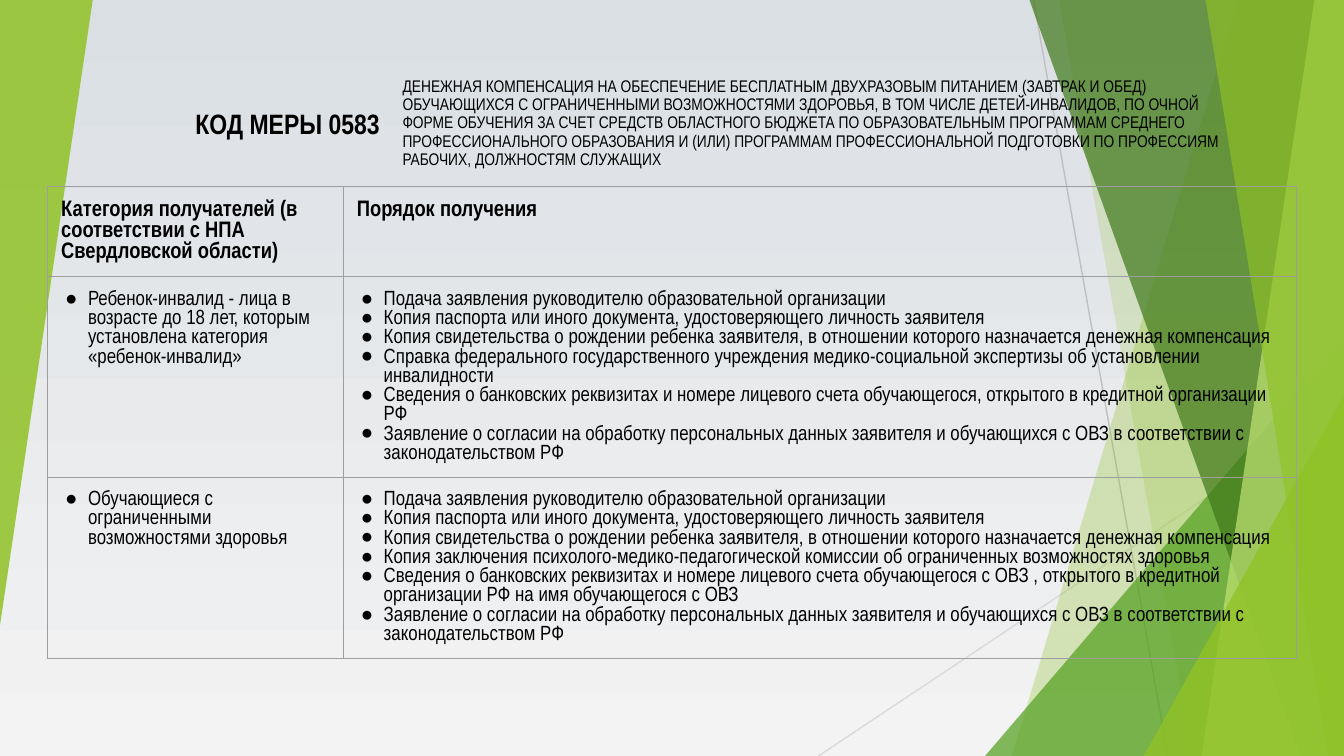
"""Builds a slide on a meal compensation measure: who receives it and how to apply."""
from dataclasses import dataclass

import lxml.etree
import pptx
import pptx.dml.color
import pptx.enum.dml
import pptx.enum.shapes
import pptx.enum.text
import pptx.oxml
import pptx.oxml.ns
import pptx.util

WIDTH = pptx.util.Inches(10)
HEIGHT = pptx.util.Inches(5.625)
FONT = "Arial Narrow"
BLACK = "000000"
BORDER = "9E9E9E"
COLUMNS = (22, 70.9)
ROWS = (11.9, 26.5, 23.95)

APPLICATION = "Подача заявления руководителю образовательной организации"
PASSPORT = "Копия паспорта или иного документа, удостоверяющего личность заявителя"
BIRTH = "Копия свидетельства о рождении ребенка заявителя, в отношении которого назначается денежная компенсация"
CONSENT = "Заявление о согласии на обработку персональных данных заявителя и обучающихся с ОВЗ в соответствии с законодательством РФ"
HEADERS = ("Категория получателей (в соответствии с НПА Свердловской области)", "Порядок получения")
TITLE = (
    "ДЕНЕЖНАЯ КОМПЕНСАЦИЯ НА ОБЕСПЕЧЕНИЕ БЕСПЛАТНЫМ ДВУХРАЗОВЫМ ПИТАНИЕМ (ЗАВТРАК И ОБЕД) "
    "ОБУЧАЮЩИХСЯ С ОГРАНИЧЕННЫМИ ВОЗМОЖНОСТЯМИ ЗДОРОВЬЯ, В ТОМ ЧИСЛЕ ДЕТЕЙ-ИНВАЛИДОВ, ПО ОЧНОЙ "
    "ФОРМЕ ОБУЧЕНИЯ ЗА СЧЕТ СРЕДСТВ ОБЛАСТНОГО БЮДЖЕТА ПО ОБРАЗОВАТЕЛЬНЫМ ПРОГРАММАМ СРЕДНЕГО "
    "ПРОФЕССИОНАЛЬНОГО ОБРАЗОВАНИЯ И (ИЛИ) ПРОГРАММАМ ПРОФЕССИОНАЛЬНОЙ ПОДГОТОВКИ ПО ПРОФЕССИЯМ "
    "РАБОЧИХ, ДОЛЖНОСТЯМ СЛУЖАЩИХ"
)


@dataclass(frozen=True)
class Area:
    """A rectangle in percent of the slide's width and height."""
    left: float
    top: float
    width: float
    height: float

    def lengths(self) -> tuple:
        """Return left, top, width and height as slide lengths."""
        return across(self.left), down(self.top), across(self.width), down(self.height)


@dataclass(frozen=True)
class Ray:
    """A thin line between two points in percent."""
    start: tuple
    end: tuple
    color: str


@dataclass(frozen=True)
class Facet:
    """A full-height panel from a slanted left edge to the slide's right edge."""
    top_left: float
    bottom_left: float
    color: str
    opacity: int


@dataclass(frozen=True)
class Corner:
    """A right-angled triangle in an area."""
    area: Area
    color: str
    opacity: int
    rotation: int = 0


@dataclass(frozen=True)
class Recipient:
    """A category of recipients and the papers it hands in."""
    category: str
    steps: tuple


DECORATION = (
    Ray((76.9, 0), (86.9, 100), "BFBFBF"),
    Ray((100, 53.7), (60.9, 100), "D9D9D9"),
    Facet(92.1, 75.3, "90C226", 30),
    Facet(78.8, 88.7, "90C226", 20),
    Corner(Area(73.3, 44.5, 26.7, 55.5), "54A021", 72),
    Facet(76.6, 96.8, "3F7819", 70),
    Facet(97.8, 89.4, "C0E474", 70),
    Facet(89.7, 98.8, "90C226", 65),
    Corner(Area(85.1, 52.3, 14.9, 47.7), "90C226", 80),
    Corner(Area(0, 0, 6.9, 82.7), "90C226", 85, 180),
)
RECIPIENTS = (
    Recipient("Ребенок-инвалид - лица в возрасте до 18 лет, которым установлена категория «ребенок-инвалид»", (
        APPLICATION, PASSPORT, BIRTH,
        "Справка федерального государственного учреждения медико-социальной экспертизы об установлении инвалидности",
        "Сведения о банковских реквизитах и номере лицевого счета обучающегося, открытого в кредитной организации РФ",
        CONSENT)),
    Recipient("Обучающиеся с ограниченными возможностями здоровья", (
        APPLICATION, PASSPORT, BIRTH,
        "Копия заключения психолого-медико-педагогической комиссии об ограниченных возможностях здоровья",
        "Сведения о банковских реквизитах и номере лицевого счета обучающегося с ОВЗ , открытого в кредитной организации РФ на имя обучающегося с ОВЗ",
        CONSENT)),
)


def across(percent: float) -> int:
    """Turn a share of the slide's width into a length."""
    return round(WIDTH * percent / 100)


def down(percent: float) -> int:
    """Turn a share of the slide's height into a length."""
    return round(HEIGHT * percent / 100)


def paint(color_format, color: str) -> None:
    """Set a colour from its hex string."""
    color_format.rgb = pptx.dml.color.RGBColor.from_string(color)


def fill_shape(shape, color: str, opacity: int) -> None:
    """Give a shape a translucent fill without line or shadow."""
    shape.shadow.inherit = False
    shape.line.fill.background()
    shape.fill.solid()
    paint(shape.fill.fore_color, color)
    tone = shape.element.spPr.find(".//" + pptx.oxml.ns.qn("a:srgbClr"))
    lxml.etree.SubElement(tone, pptx.oxml.ns.qn("a:alpha"), val=str(opacity * 1000))


def draw_decoration(slide, item) -> None:
    """Draw one ray, facet or corner."""
    if isinstance(item, Ray):
        line = slide.shapes.add_connector(
            pptx.enum.shapes.MSO_CONNECTOR.STRAIGHT,
            across(item.start[0]), down(item.start[1]), across(item.end[0]), down(item.end[1]))
        line.line.width = pptx.util.Pt(0.75)
        paint(line.line.color, item.color)
        lxml.etree.SubElement(line.element.spPr, pptx.oxml.ns.qn("a:effectLst"))
        return
    if isinstance(item, Facet):
        builder = slide.shapes.build_freeform(across(item.top_left), 0)
        builder.add_line_segments([(WIDTH, 0), (WIDTH, HEIGHT), (across(item.bottom_left), HEIGHT)])
        shape = builder.convert_to_shape()
    else:
        shape = slide.shapes.add_shape(
            pptx.enum.shapes.MSO_SHAPE.ISOSCELES_TRIANGLE, *item.area.lengths())
        shape.adjustments[0] = 1
        shape.rotation = item.rotation
    fill_shape(shape, item.color, item.opacity)


def style_paragraph(paragraph, size: float, bold: bool = False, spacing: float = 1.0) -> None:
    """Set the font and line spacing of a paragraph."""
    paragraph.line_spacing = spacing
    font = paragraph.font
    font.name, font.size, font.bold = FONT, pptx.util.Pt(size), bold
    paint(font.color, BLACK)


def add_bullet(paragraph) -> None:
    """Give a paragraph a round bullet and a hanging indent."""
    properties = paragraph._p.get_or_add_pPr()
    properties.set("marL", str(pptx.util.Inches(0.2)))
    properties.set("indent", str(pptx.util.Inches(-0.17)))
    color = lxml.etree.SubElement(properties, pptx.oxml.ns.qn("a:buClr"))
    lxml.etree.SubElement(color, pptx.oxml.ns.qn("a:srgbClr"), val=BLACK)
    lxml.etree.SubElement(properties, pptx.oxml.ns.qn("a:buFont"), typeface=FONT)
    lxml.etree.SubElement(properties, pptx.oxml.ns.qn("a:buChar"), char="●")


def set_margins(frame, horizontal: float, vertical: float) -> None:
    """Set the inner margins of a cell or text frame in inches."""
    frame.margin_left = frame.margin_right = pptx.util.Inches(horizontal)
    frame.margin_top = frame.margin_bottom = pptx.util.Inches(vertical)


def fill_cell(cell, lines: tuple, header: bool) -> None:
    """Write a bordered cell, bulleted unless it is a header."""
    set_margins(cell, 0.1, 0.1)
    cell.fill.background()
    for index, side in enumerate(("lnL", "lnR", "lnT", "lnB")):
        cell._tc.get_or_add_tcPr().insert(index, pptx.oxml.parse_xml(
            f'<a:{side} {pptx.oxml.ns.nsdecls("a")} w="{pptx.util.Pt(0.75)}">'
            f'<a:solidFill><a:srgbClr val="{BORDER}"/></a:solidFill></a:{side}>'))
    cell.text_frame.text = "\n".join(lines)
    for paragraph in cell.text_frame.paragraphs:
        if not header:
            add_bullet(paragraph)
        style_paragraph(paragraph, 12 if header else 11, header)


def add_recipient_table(slide) -> None:
    """Add the table of recipients and procedures."""
    area = Area(3.55, 24.7, sum(COLUMNS), sum(ROWS))
    table = slide.shapes.add_table(len(ROWS), len(COLUMNS), *area.lengths()).table
    table.first_row = table.horz_banding = False
    for column, share in zip(table.columns, COLUMNS):
        column.width = across(share)
    for row, share in zip(table.rows, ROWS):
        row.height = down(share)
    content = [tuple((text,) for text in HEADERS)]
    content += [((recipient.category,), recipient.steps) for recipient in RECIPIENTS]
    for row_index, texts in enumerate(content):
        for column_index, lines in enumerate(texts):
            fill_cell(table.cell(row_index, column_index), lines, row_index == 0)


def write_heading(box, area: Area, text: str, size: float, bold: bool, spacing: float, align, margins: tuple) -> None:
    """Place and format the title or its label."""
    box.left, box.top, box.width, box.height = area.lengths()
    frame = box.text_frame
    frame.text = text
    frame.word_wrap = True
    frame.auto_size = pptx.enum.text.MSO_AUTO_SIZE.NONE
    frame.vertical_anchor = pptx.enum.text.MSO_ANCHOR.MIDDLE
    set_margins(frame, *margins)
    frame.paragraphs[0].alignment = align
    style_paragraph(frame.paragraphs[0], size, bold, spacing)


def main() -> None:
    """Build and save the deck."""
    deck = pptx.Presentation()
    deck.slide_width, deck.slide_height = WIDTH, HEIGHT
    slide = deck.slides.add_slide(deck.slide_layouts.get_by_name("Title Only"))
    backdrop = slide.background.fill
    backdrop.gradient()
    backdrop.gradient_angle = 270
    for stop, color in zip(backdrop.gradient_stops, ("DADFE4", "F3F3F3")):
        paint(stop.color, color)
    for item in DECORATION:
        draw_decoration(slide, item)
    add_recipient_table(slide)
    title = slide.shapes.title
    title.element.getparent().append(title.element)
    align = pptx.enum.text.PP_ALIGN
    write_heading(title, Area(29.25, 9.5, 63, 13.7), TITLE, 9, False, 0.9, align.LEFT, (0.07, 0.04))
    label_area = Area(8.15, 9.4, 21.1, 13.7)
    label = slide.shapes.add_textbox(*label_area.lengths())
    write_heading(label, label_area, "КОД МЕРЫ 0583", 15, True, 1.0, align.RIGHT, (0.1, 0.1))
    deck.save("out.pptx")


if __name__ == "__main__":
    main()
